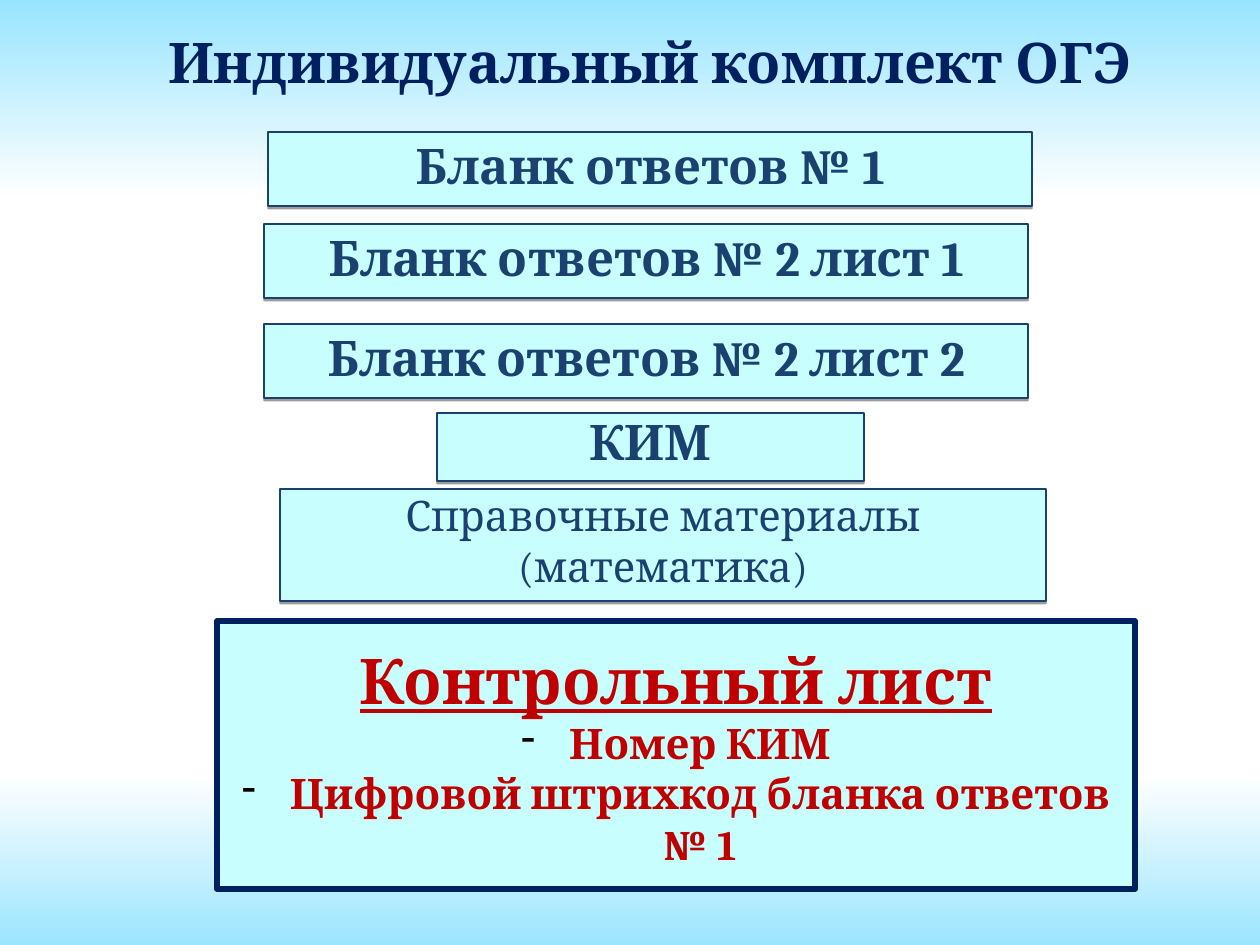
from lxml import etree
from pptx import Presentation, util as u
from pptx.dml.color import RGBColor
from pptx.enum import shapes, text
from pptx.oxml.ns import qn

THEME = {
    "font": "Cambria",
    "navy": "002060", "ink": "1B4171", "red": "C00000", "bullet": "000000",
    "panel": "C8FEFD", "shadow": "000000",
    "sky": [(0, "97E4FF"), (21, "FFFFFF"), (82, "FFFFFF"), (100, "9BE5FF")],
    "title": 32, "heading": 36, "label": 28, "body": 24,
}
PX = 914400 / 126


def add_run(p, words, size, color, bold=True, underline=False):
    r = p.add_run()
    r.text = words
    f = r.font
    f.name, f.size, f.bold, f.underline = THEME["font"], u.Pt(size), bold, underline
    f.color.rgb = RGBColor.from_string(THEME[color])
    p.alignment = text.PP_ALIGN.CENTER


def add_panel(s, box, line, width):
    sp = s.shapes.add_shape(shapes.MSO_SHAPE.RECTANGLE, *[round(v * PX) for v in box])
    sp.shadow.inherit = False
    sp.fill.solid()
    sp.fill.fore_color.rgb = RGBColor.from_string(THEME["panel"])
    sp.line.color.rgb = RGBColor.from_string(THEME[line])
    sp.line.width = u.Pt(width)
    sp.text_frame.word_wrap = True
    return sp


prs = Presentation()
prs.slide_width, prs.slide_height = round(1260 * PX), round(945 * PX)
s = prs.slides.add_slide(prs.slide_layouts[5])

# Background gradient, top to bottom
fill = s.background.fill
fill.gradient()
fill.gradient_angle = 270
stops = s.element.find(".//" + qn("a:gsLst"))
for old in list(stops):
    stops.remove(old)
for pos, color in THEME["sky"]:
    gs = etree.SubElement(stops, qn("a:gs"), pos=str(pos * 1000))
    etree.SubElement(gs, qn("a:srgbClr"), val=color)

# Title
title = s.shapes.title
title.left, title.top, title.width, title.height = [round(v * PX) for v in (63, 16, 1174, 91)]
tf = title.text_frame
tf.vertical_anchor = text.MSO_ANCHOR.MIDDLE
add_run(tf.paragraphs[0], "Индивидуальный комплект ОГЭ", THEME["title"], "navy")

# Parts of the kit: box, lines, type size, bold, line spacing
parts = [
    ((268, 132, 764, 74), ["Бланк ответов № 1"], "label", True, 0.9),
    ((264, 224, 764, 74), ["Бланк ответов № 2 лист 1"], "label", True, 0.9),
    ((264, 324, 764, 74), ["Бланк ответов № 2 лист 2"], "label", True, 0.9),
    ((437, 413, 427, 68), ["КИМ"], "label", True, 0.8),
    ((280, 489, 766, 112), ["Справочные материалы", "(математика)"], "body", False, 0.8),
]
for box, lines, size, bold, spacing in parts:
    sp = add_panel(s, box, "ink", 0.75)
    effects = sp.element.spPr.find(qn("a:effectLst"))
    shadow = etree.SubElement(effects, qn("a:outerShdw"), dist=str(u.Pt(1.6)),
                              dir="5400000", rotWithShape="0")
    color = etree.SubElement(shadow, qn("a:srgbClr"), val=THEME["shadow"])
    etree.SubElement(color, qn("a:alpha"), val="38000")
    tf = sp.text_frame
    tf.vertical_anchor = text.MSO_ANCHOR.TOP
    tf.margin_top = tf.margin_bottom = round(10 * PX)
    for i, words in enumerate(lines):
        p = tf.add_paragraph() if i else tf.paragraphs[0]
        p.line_spacing = spacing
        if i:
            p.space_before = u.Pt(6)
        add_run(p, words, THEME[size], "ink", bold)

# Control sheet with its bulleted contents
sp = add_panel(s, (217, 621, 918, 268), "navy", 3.15)
tf = sp.text_frame
tf.vertical_anchor = text.MSO_ANCHOR.MIDDLE
add_run(tf.paragraphs[0], "Контрольный лист", THEME["heading"], "red", underline=True)
indent = round(48 * PX)
for words in ("Номер КИМ", "Цифровой штрихкод бланка ответов № 1"):
    p = tf.add_paragraph()
    pPr = p._p.get_or_add_pPr()
    pPr.set("marL", str(indent))
    pPr.set("indent", str(-indent))
    color = etree.SubElement(pPr, qn("a:buClr"))
    etree.SubElement(color, qn("a:srgbClr"), val=THEME["bullet"])
    etree.SubElement(pPr, qn("a:buChar"), char="-")
    add_run(p, words, THEME["body"], "red")

prs.save("out.pptx")
